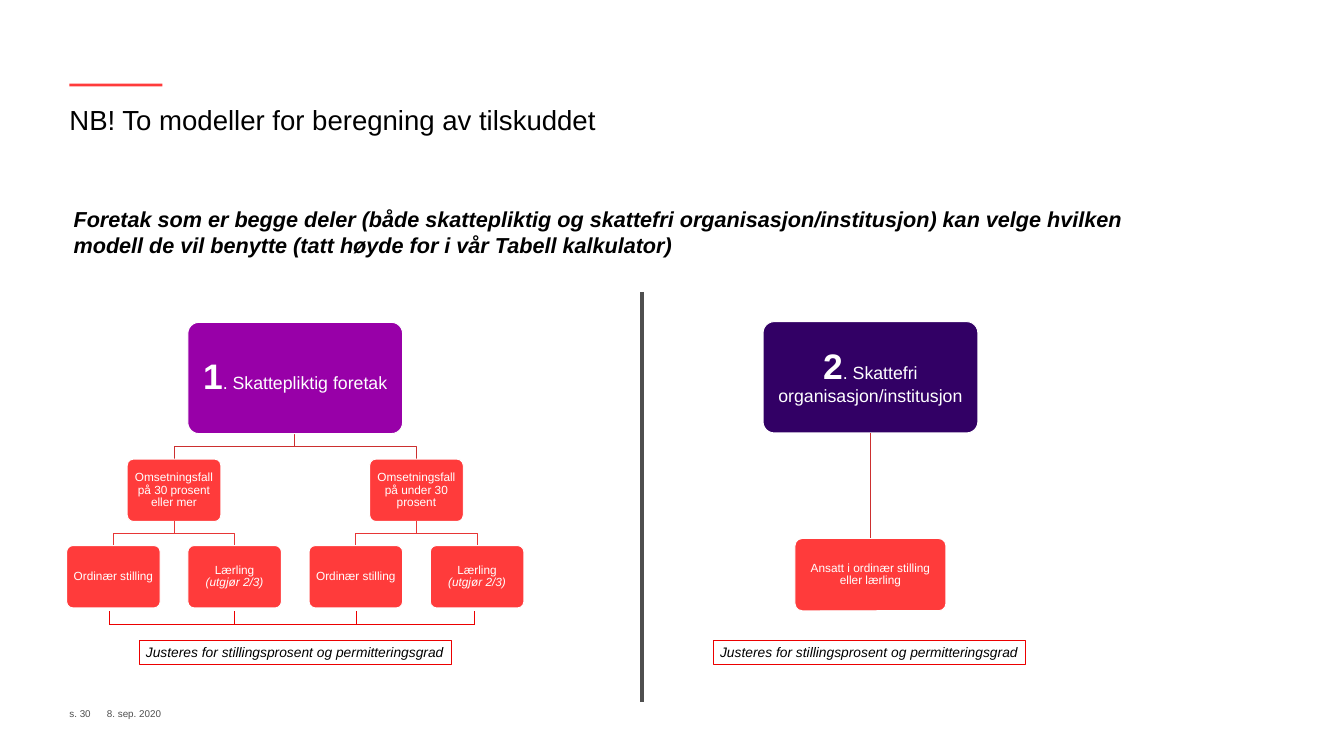
from lxml.etree import SubElement
from pptx import Presentation
from pptx.dml.color import RGBColor
from pptx.enum.shapes import MSO_CONNECTOR, MSO_SHAPE
from pptx.enum.text import MSO_ANCHOR, MSO_AUTO_SIZE, PP_ALIGN
from pptx.oxml.ns import qn
from pptx.util import Emu, Pt

PX = 9144
RED, PURPLE, INDIGO = "FF3B3B", "9800A8", "320065"
ROOT_LINE, LEAF_LINE, NOTE_LINE = "CC2F2F", "E73636", "EC0000"
WHITE, BLACK, GREY = "FFFFFF", "000000", "4F4F4F"

TITLE = "NB! To modeller for beregning av tilskuddet"
MESSAGE = ("Foretak som er begge deler (både skattepliktig og skattefri organisasjon/institusjon) "
           "kan velge hvilken modell de vil benytte (tatt høyde for i vår Tabell kalkulator)")
TAXABLE = [("1", 36, "b"), (". Skattepliktig foretak", 18, "")]
EXEMPT = [("2", 36, "b"), (". Skattefri organisasjon/institusjon", 18, "")]
TURNOVER_DROPS = ["Omsetningsfall på 30 prosent eller mer", "Omsetningsfall på under 30 prosent"]
POSITIONS = [
    [("Ordinær stilling", 12, "")],
    [("Lærling\v", 12, ""), ("(utgjør 2/3)", 12, "i")],
]
EMPLOYEE = "Ansatt i ordinær stilling eller lærling"
NOTE = "Justeres for stillingsprosent og permitteringsgrad"
FOOTER = [("s. 30", 98, 53), ("8. sep. 2020", 151, 134)]

FIRST_LEAF, LEAF_STEP = 160, 171
NODE_W, NODE_H = 132, 88
ROOT_W, ROOT_H, ROOT_TOP = 303, 157, 455
DROP_TOP, LEAF_TOP = 648, 770
EXEMPT_CENTRE = 1228
BRACKET_XS, BRACKET_TOP, BRACKET_BOTTOM = [154, 331, 503, 670], 863, 882


def px(*lengths):
    return [Emu(round(length * PX)) for length in lengths]


def colour(hex_value):
    return RGBColor.from_string(hex_value)


def write(frame, runs, ink, align=PP_ALIGN.LEFT, spacing=1.0, inset=None, anchor=MSO_ANCHOR.TOP, wrap=True):
    frame.word_wrap = wrap
    frame.auto_size = MSO_AUTO_SIZE.NONE
    frame.vertical_anchor = anchor
    if inset is not None:
        frame.margin_left = frame.margin_top = frame.margin_right = frame.margin_bottom = px(inset)[0]
    paragraph = frame.paragraphs[0]
    paragraph.alignment = align
    paragraph.line_spacing = spacing
    for text, size, style in runs:
        run = paragraph.add_run()
        run.text = text.rstrip("\v")
        run.font.name = "Arial"
        run.font.size = Pt(size)
        run.font.bold = "b" in style
        run.font.italic = "i" in style
        run.font.color.rgb = colour(ink)
        if text.endswith("\v"):
            paragraph.add_line_break()


def add_box(slide, kind, left, top, width, height, fill=None, line=None, weight=1):
    box = slide.shapes.add_shape(kind, *px(left, top, width, height))
    box.shadow.inherit = False
    if fill:
        box.fill.solid()
        box.fill.fore_color.rgb = colour(fill)
    else:
        box.fill.background()
    if line:
        box.line.color.rgb = colour(line)
        box.line.width = Pt(weight)
    else:
        box.line.fill.background()
    return box


def add_node(slide, centre, top, width, height, fill, runs, inset=5):
    node = add_box(slide, MSO_SHAPE.ROUNDED_RECTANGLE, centre - width / 2, top, width, height, fill, WHITE)
    node.adjustments[0] = 0.1
    write(node.text_frame, runs, WHITE, PP_ALIGN.CENTER, 0.9, inset, MSO_ANCHOR.MIDDLE)
    return node


def add_line(slide, x1, y1, x2, y2, ink, weight=1):
    line = slide.shapes.add_connector(MSO_CONNECTOR.STRAIGHT, *px(x1, y1, x2, y2))
    line.line.color.rgb = colour(ink)
    line.line.width = Pt(weight)
    SubElement(line._element.spPr, qn("a:effectLst"))
    return line


def add_branch(slide, x1, y1, x2, y2, ink):
    middle = (y1 + y2) / 2
    builder = slide.shapes.build_freeform(x1, y1, scale=PX)
    builder.add_line_segments([(x1, middle), (x2, middle), (x2, y2)], close=False)
    branch = builder.convert_to_shape()
    branch.shadow.inherit = False
    branch.fill.background()
    branch.line.color.rgb = colour(ink)
    branch.line.width = Pt(1)


def add_text(slide, left, top, width, height, runs, ink, **layout):
    box = slide.shapes.add_textbox(*px(left, top, width, height))
    write(box.text_frame, runs, ink, **layout)


def add_taxable_model(slide):
    leaves = [FIRST_LEAF + LEAF_STEP * i for i in range(4)]
    drops = [(leaves[i] + leaves[i + 1]) / 2 for i in (0, 2)]
    root = sum(drops) / 2
    for i, drop in enumerate(drops):
        add_branch(slide, root, ROOT_TOP + ROOT_H, drop, DROP_TOP, ROOT_LINE)
        add_node(slide, drop, DROP_TOP, NODE_W, NODE_H, RED, [(TURNOVER_DROPS[i], 12, "")])
        for leaf, position in zip(leaves[2 * i:2 * i + 2], POSITIONS):
            add_branch(slide, drop, DROP_TOP + NODE_H, leaf, LEAF_TOP, LEAF_LINE)
            add_node(slide, leaf, LEAF_TOP, NODE_W, NODE_H, RED, position)
    add_node(slide, root, ROOT_TOP, ROOT_W, ROOT_H, PURPLE, TAXABLE, 15)
    for x in BRACKET_XS:
        add_line(slide, x, BRACKET_TOP, x, BRACKET_BOTTOM, NOTE_LINE)
    add_line(slide, BRACKET_XS[0], BRACKET_BOTTOM, BRACKET_XS[-1], BRACKET_BOTTOM, NOTE_LINE)


def add_exempt_model(slide):
    root = add_node(slide, EXEMPT_CENTRE, ROOT_TOP - 1, ROOT_W, ROOT_H, INDIGO, EXEMPT, 15)
    employee = add_node(slide, EXEMPT_CENTRE, 760, 213, 102, RED, [(EMPLOYEE, 12, "")])
    link = add_line(slide, EXEMPT_CENTRE, ROOT_TOP + ROOT_H, EXEMPT_CENTRE, 760, ROOT_LINE)
    link.begin_connect(root, 2)
    link.end_connect(employee, 0)


def main():
    deck = Presentation()
    deck.slide_width, deck.slide_height = px(1896, 1067)
    slide = deck.slides.add_slide(deck.slide_layouts[5])
    title = slide.shapes.title
    title.left, title.top, title.width, title.height = px(98, 146, 1700, 94)
    write(title.text_frame, [(TITLE, 28, "")], BLACK, inset=0)
    add_box(slide, MSO_SHAPE.RECTANGLE, 98, 118, 131, 4, RED)
    add_text(slide, 94, 286, 1569, 84, [(MESSAGE, 22, "bi")], BLACK)
    add_taxable_model(slide)
    add_exempt_model(slide)
    for left in (196, 1006):
        note = add_box(slide, MSO_SHAPE.RECTANGLE, left, 904, 441, 34, line=NOTE_LINE, weight=0.75)
        write(note.text_frame, [(NOTE, 14, "i")], BLACK, wrap=False)
    add_line(slide, 906, 412, 906, 991, GREY, 4.5)
    for text, left, width in FOOTER:
        add_text(slide, left, 998, width, 17, [(text, 10, "")], GREY, inset=0, anchor=MSO_ANCHOR.MIDDLE)
    deck.save("out.pptx")


if __name__ == "__main__":
    main()
